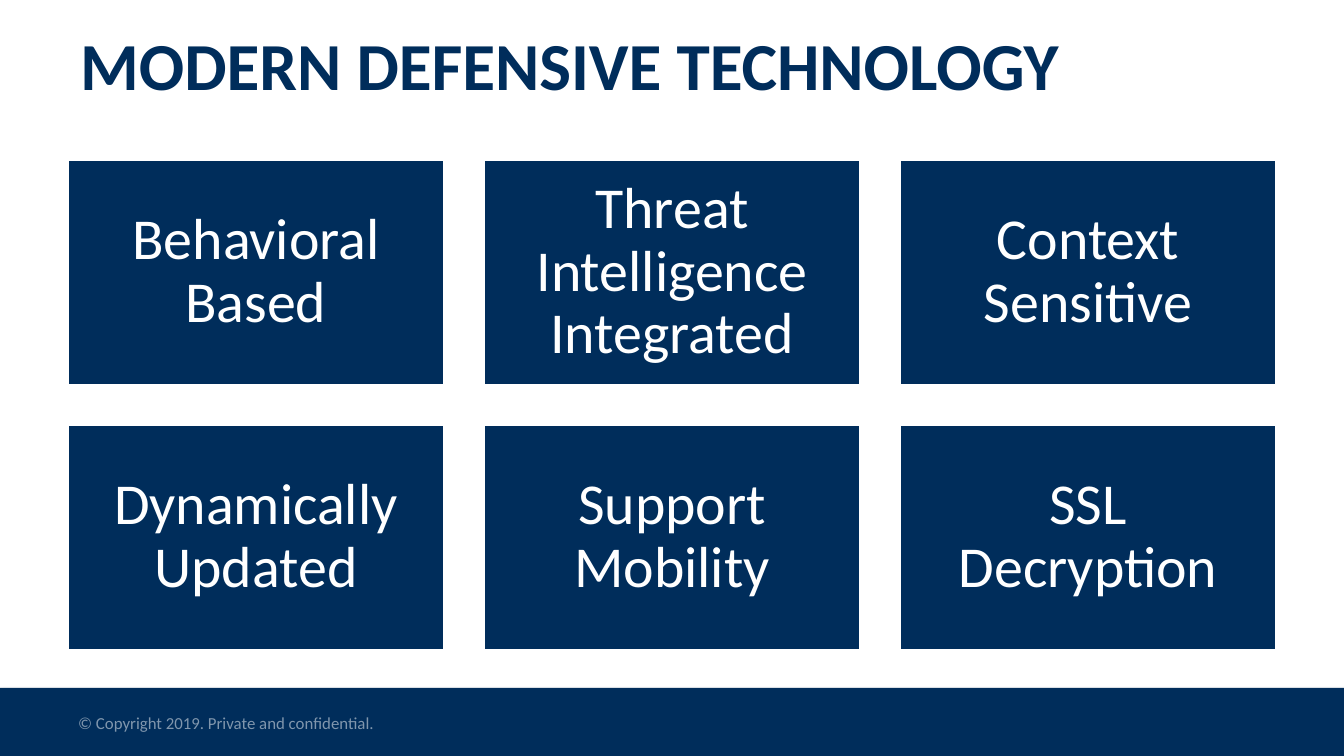
from lxml import etree
from pptx import Presentation
from pptx.dml.color import RGBColor
from pptx.enum.shapes import MSO_SHAPE as Shape
from pptx.enum.text import MSO_ANCHOR as Anchor, PP_ALIGN as Align
from pptx.oxml import parse_xml
from pptx.oxml.ns import nsdecls, qn
from pptx.util import Pt

NAVY = RGBColor(0x00, 0x2D, 0x5B)
WHITE = RGBColor(0xFF, 0xFF, 0xFF)
MUTED = RGBColor(0x80, 0x96, 0xAD)

SLIDE_W, SLIDE_H = 1344, 756
SCALE = 914400 / 134.4

TRAITS = [
    "Behavioral Based", "Threat Intelligence Integrated", "Context Sensitive",
    "Dynamically Updated", "Support Mobility", "SSL Decryption",
]
COLUMNS = 3
CARD_W, CARD_H, GAP = 378, 227, 38
GRID_LEFT, GRID_TOP = 67, 159


def px(*values):
    return [round(v * SCALE) for v in values]


class Deck:
    font = "Calibri"

    def __init__(self, prs):
        self.s = prs.slides.add_slide(prs.slide_layouts[6])

    def set_text(self, sp, text, size, color, bold=False, align=Align.LEFT,
                 anchor=Anchor.TOP, spacing=1.0):
        tf = sp.text_frame
        tf.word_wrap = True
        tf.vertical_anchor = anchor
        tf.text = text
        p = tf.paragraphs[0]
        p.alignment, p.line_spacing = align, spacing
        f = p.runs[0].font
        f.name, f.size, f.bold = self.font, Pt(size), bold
        f.color.rgb = color
        return tf

    def text(self, box, text, size, color, **style):
        self.set_text(self.s.shapes.add_textbox(*px(*box)), text, size, color, **style)

    def rect(self, box):
        sp = self.s.shapes.add_shape(Shape.RECTANGLE, *px(*box))
        sp.shadow.inherit = False
        sp.fill.solid()
        sp.fill.fore_color.rgb = NAVY
        sp.line.fill.background()
        return sp

    def footer_bar(self, box):
        """Draw a bar with a soft shadow."""
        effects = self.rect(box)._element.spPr.find(qn("a:effectLst"))
        shadow = parse_xml(f'<a:outerShdw {nsdecls("a")} rotWithShape="0"/>')
        shadow.set("blurRad", str(Pt(3.1)))
        shadow.set("dist", str(Pt(1.8)))
        shadow.set("dir", "5400000")
        color = etree.SubElement(shadow, qn("a:srgbClr"), val="000000")
        etree.SubElement(color, qn("a:alpha"), val="35000")
        effects.append(shadow)

    def card(self, box, text):
        sp = self.rect(box)
        sp.line.color.rgb = WHITE
        sp.line.width = Pt(2)
        tf = self.set_text(sp, text, 31, WHITE, align=Align.CENTER,
                           anchor=Anchor.MIDDLE, spacing=0.9)
        inset, = px(17)
        tf.margin_left = tf.margin_right = tf.margin_top = tf.margin_bottom = inset


def main():
    prs = Presentation()
    prs.slide_width, prs.slide_height = px(SLIDE_W, SLIDE_H)
    deck = Deck(prs)
    deck.footer_bar((0, 688, SLIDE_W, 68))
    deck.text((65, 706, 454, 34), "© Copyright 2019. Private and confidential.", 9, MUTED)
    for i, trait in enumerate(TRAITS):
        row, col = divmod(i, COLUMNS)
        left = GRID_LEFT + col * (CARD_W + GAP)
        top = GRID_TOP + row * (CARD_H + GAP)
        deck.card((left, top, CARD_W, CARD_H), trait)
    deck.text((67, 20, 1210, 102), "MODERN DEFENSIVE TECHNOLOGY", 36, NAVY,
              bold=True, anchor=Anchor.MIDDLE, spacing=0.8)
    prs.save("out.pptx")


if __name__ == "__main__":
    main()
